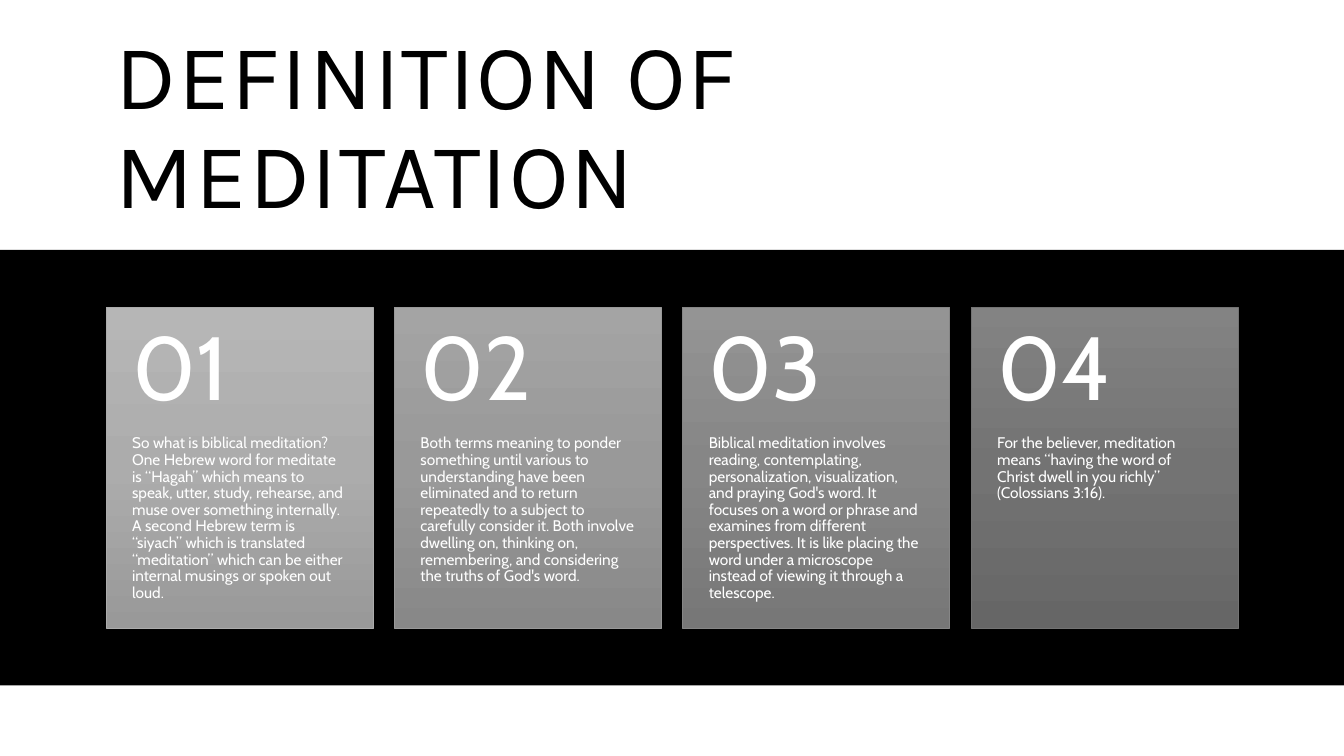
from copy import deepcopy

from pptx import Presentation
from pptx.dml.color import RGBColor
from pptx.enum.shapes import MSO_SHAPE
from pptx.enum.text import MSO_ANCHOR
from pptx.oxml.ns import qn
from pptx.util import Inches, Pt

RECT = MSO_SHAPE.RECTANGLE
TOP, MIDDLE = MSO_ANCHOR.TOP, MSO_ANCHOR.MIDDLE

CARDS = [
    (("B6B6B6", "ACACAC", "999999"),
     "So what is biblical meditation? One Hebrew word for meditate is “Hagah” which means to "
     "speak, utter, study, rehearse, and muse over something internally. A second Hebrew term is "
     "“siyach” which is translated “meditation” which can be either internal musings or spoken "
     "out loud."),
    (("A4A4A4", "999999", "888888"),
     "Both terms meaning to ponder something until various to understanding have been eliminated "
     "and to return repeatedly to a subject to carefully consider it. Both involve dwelling on, "
     "thinking on, remembering, and considering the truths of God's word."),
    (("949494", "868686", "777777"),
     "Biblical meditation involves reading, contemplating, personalization, visualization, and "
     "praying God's word. It focuses on a word or phrase and examines from different "
     "perspectives. It is like placing the word under a microscope instead of viewing it through "
     "a telescope."),
    (("838383", "737373", "666666"),
     "For the believer, meditation means “having the word of Christ dwell in you richly” "
     "(Colossians 3:16)."),
]
CARD_LEFT, CARD_TOP, CARD_W, CARD_H = 1.05, 3.05, 2.65, 3.18
CARD_PITCH = 2.86
NUMBER_H = 1.27


def rgb(hex_color):
    return RGBColor.from_string(hex_color)


def add_text(shapes, box, text, size, font, color, anchor, insets):
    """Add a wrapped text box; box and insets are in inches, insets left, top, right, bottom."""
    sp = shapes.add_textbox(*map(Inches, box))
    tf = sp.text_frame
    tf.word_wrap = True
    tf.vertical_anchor = anchor
    tf.margin_left, tf.margin_top, tf.margin_right, tf.margin_bottom = map(Inches, insets)
    p = tf.paragraphs[0]
    p.line_spacing = 0.9
    r = p.add_run()
    r.text = text
    p.font.size = Pt(size)
    p.font.name = font
    p.font.color.rgb = rgb(color)
    return r


prs = Presentation()
prs.slide_width, prs.slide_height = Inches(13.33), Inches(7.5)
s = prs.slides.add_slide(prs.slide_layouts[6])
s.background.fill.solid()
s.background.fill.fore_color.rgb = rgb("FFFFFF")

title = add_text(s.shapes, (1.05, 0.35, 11.23, 1.86), "DEFINITION OF MEDITATION",
                 66, "Karla", "000000", MIDDLE, (0.1, 0.05, 0.1, 0.05))
title.font._element.set("spc", "120")

band = s.shapes.add_shape(RECT, 0, Inches(2.48), prs.slide_width, Inches(4.32))
band.shadow.inherit = False
band.fill.solid()
band.fill.fore_color.rgb = rgb("000000")
band.line.fill.background()

cards = s.shapes.add_group_shape().shapes
for i, (shades, text) in enumerate(CARDS):
    left = CARD_LEFT + i * CARD_PITCH
    card = cards.add_shape(RECT, Inches(left), Inches(CARD_TOP), Inches(CARD_W), Inches(CARD_H))
    card.shadow.inherit = False
    card.line.color.rgb = rgb(shades[1])
    card.line.width = Pt(0.5)

    card.fill.gradient()
    card.fill.gradient_angle = 270
    stop_list = card.element.spPr.find(qn("a:gradFill")).find(qn("a:gsLst"))
    stop_list.insert(1, deepcopy(stop_list[0]))
    for stop, shade, position in zip(card.fill.gradient_stops, shades, (0, 0.5, 1)):
        stop.color.rgb = rgb(shade)
        stop.position = position

    add_text(cards, (left, CARD_TOP + NUMBER_H, CARD_W, CARD_H - NUMBER_H), text,
             11, "Cabin", "FFFFFF", TOP, (0.26, 0, 0.26, 0.36))
    add_text(cards, (left, CARD_TOP, CARD_W, NUMBER_H), f"{i + 1:02}",
             64, "Cabin", "FFFFFF", MIDDLE, (0.26, 0.18, 0.26, 0.18))

prs.save("out.pptx")
